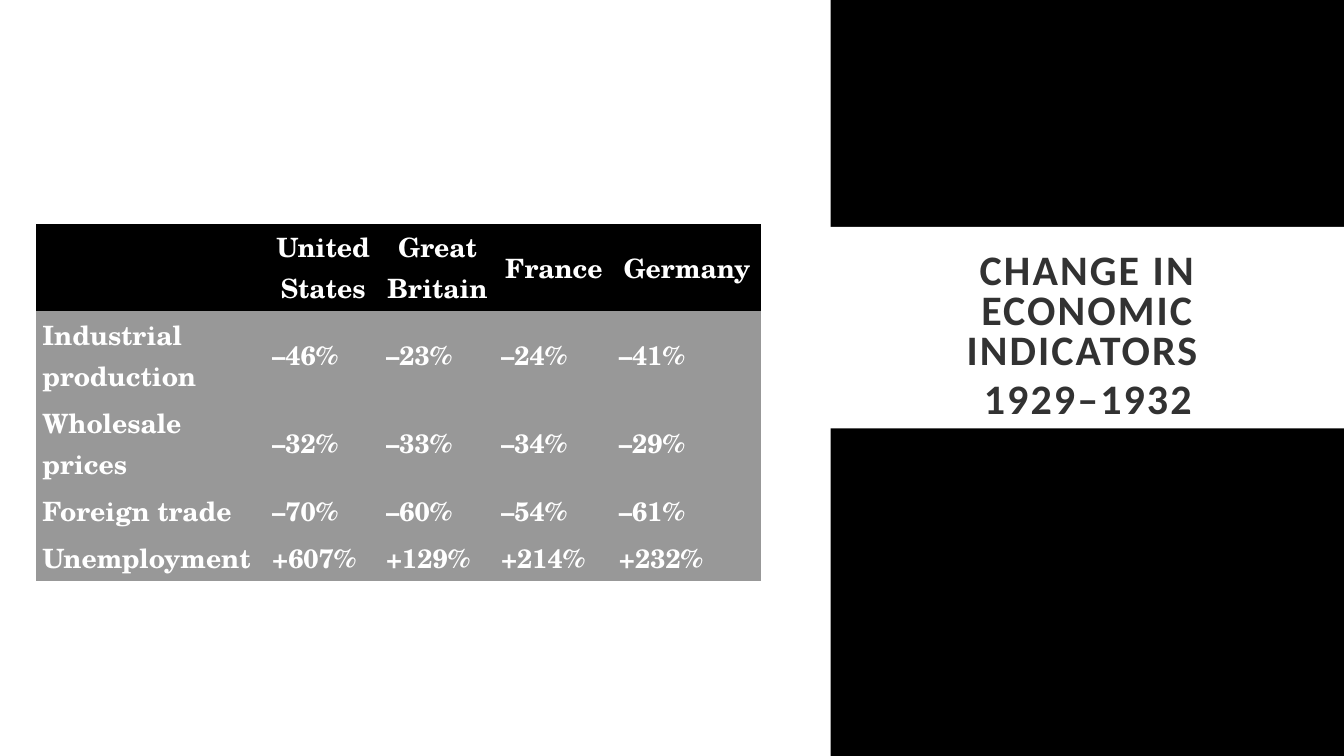
from dataclasses import dataclass

from pptx import Presentation
from pptx.dml.color import RGBColor
from pptx.enum.shapes import MSO_SHAPE as Shape
from pptx.enum.text import MSO_ANCHOR as Anchor, PP_ALIGN as Align
from pptx.oxml.ns import qn
from pptx.slide import Slide
from pptx.table import _Cell as Cell
from pptx.util import Inches, Pt

BLACK = RGBColor(0x00, 0x00, 0x00)
WHITE = RGBColor(0xFF, 0xFF, 0xFF)
GRAY = RGBColor(0x98, 0x98, 0x98)
DARK = RGBColor(0x32, 0x32, 0x32)
PLAIN = "{2D5ABB26-0587-4C30-8999-92F81FD0307C}"


@dataclass
class Panel:
    left: float
    top: float
    width: float
    height: float


BAND = Panel(0, 2.25, 13.33, 2)
SIDE = Panel(0, 0, 8.24, 7.5)
TITLE = ["CHANGE IN ECONOMIC INDICATORS ", "1929–1932"]
WIDTHS = [2.28, 1.13, 1.14, 1.17, 1.47]
HEIGHTS = [0.87, 0.87, 0.87, 0.47, 0.47]
ROWS = [
    ["", "United States", "Great Britain", "France", "Germany"],
    ["Industrial production", "–46%", "–23%", "–24%", "–41%"],
    ["Wholesale prices", "–32%", "–33%", "–34%", "–29%"],
    ["Foreign trade", "–70%", "–60%", "–54%", "–61%"],
    ["Unemployment", "+607%", "+129%", "+214%", "+232%"],
]


def draw_panel(slide: Slide, panel: Panel) -> None:
    rect = slide.shapes.add_shape(
        Shape.RECTANGLE, Inches(panel.left), Inches(panel.top),
        Inches(panel.width), Inches(panel.height))
    rect.shadow.inherit = False
    rect.fill.solid()
    rect.fill.fore_color.rgb = WHITE
    rect.line.fill.background()


def draw_title(slide: Slide) -> None:
    box = slide.shapes.add_textbox(
        Inches(8.6), Inches(2.4), Inches(4.38), Inches(1.9))
    frame = box.text_frame
    frame.word_wrap = True
    frame.vertical_anchor = Anchor.MIDDLE
    frame.text = "\n".join(TITLE)
    for par in frame.paragraphs:
        par.alignment = Align.CENTER
        par.line_spacing = 0.8
        par.space_after = Pt(6)
        par.font.name = "Calibri"
        par.font.size = Pt(30)
        par.font.bold = True
        par.font.color.rgb = DARK
        for run in par.runs:
            run._r.get_or_add_rPr().set("spc", "150")


def fill_cell(cell: Cell, text: str, head: bool) -> None:
    cell.fill.solid()
    cell.fill.fore_color.rgb = BLACK if head else GRAY
    cell.vertical_anchor = Anchor.MIDDLE
    cell.margin_left = cell.margin_right = Inches(0.06)
    cell.margin_top = cell.margin_bottom = Inches(0.03)
    cell.text = text
    par = cell.text_frame.paragraphs[0]
    par.alignment = Align.CENTER if head else Align.LEFT
    par.font.name = "TeX Gyre Schola"
    par.font.size = Pt(19)
    par.font.bold = True
    par.font.color.rgb = WHITE


def draw_table(slide: Slide) -> None:
    table = slide.shapes.add_table(
        len(ROWS), len(WIDTHS), Inches(0.36), Inches(2.22),
        Inches(sum(WIDTHS)), Inches(sum(HEIGHTS))).table
    table.horz_banding = False
    table._tbl.tblPr.find(qn("a:tableStyleId")).text = PLAIN
    for col, width in zip(table.columns, WIDTHS):
        col.width = Inches(width)
    for index, (row, height) in enumerate(zip(table.rows, HEIGHTS)):
        row.height = Inches(height)
        for cell, text in zip(row.cells, ROWS[index]):
            fill_cell(cell, text, index == 0)


def main() -> None:
    deck = Presentation()
    deck.slide_width = Inches(13.33)
    deck.slide_height = Inches(7.5)
    slide = deck.slides.add_slide(deck.slide_layouts[6])
    slide.background.fill.solid()
    slide.background.fill.fore_color.rgb = BLACK
    draw_panel(slide, BAND)
    draw_title(slide)
    draw_panel(slide, SIDE)
    draw_table(slide)
    deck.save("out.pptx")


if __name__ == "__main__":
    main()
